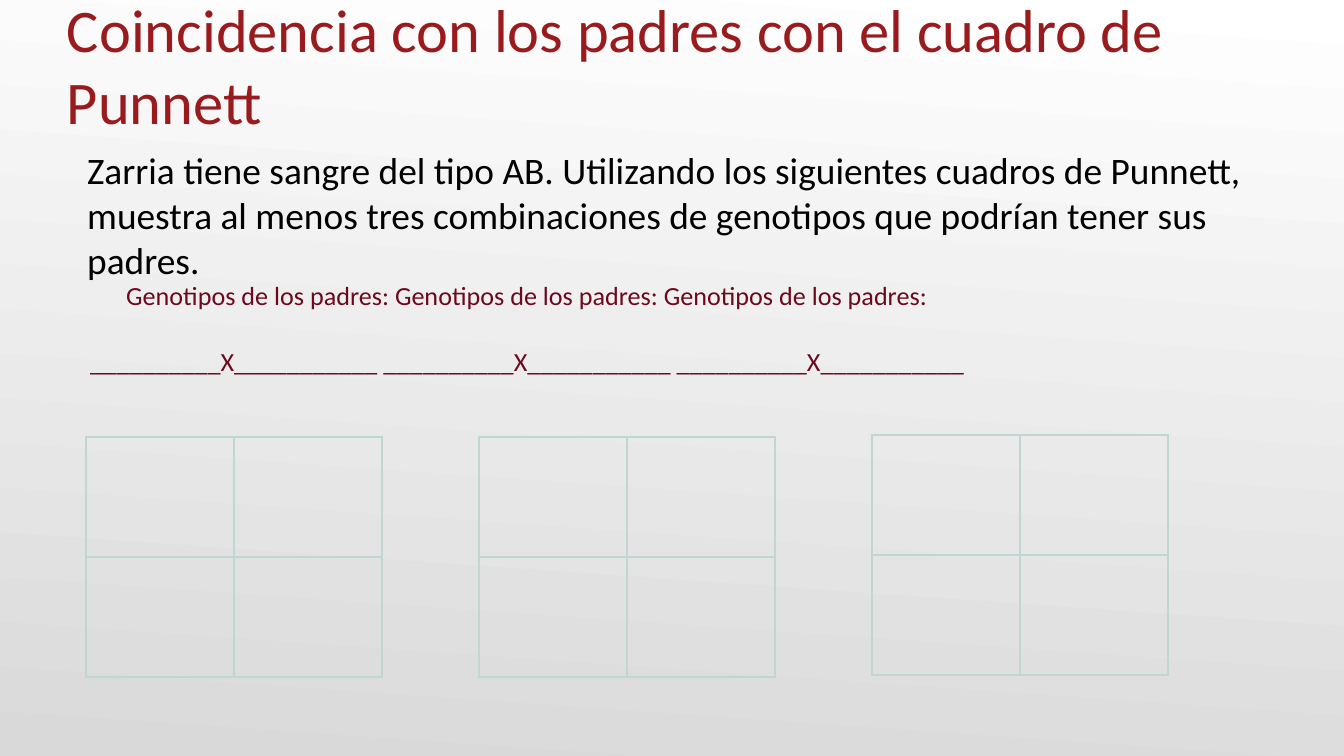
from lxml import etree
from pptx import Presentation
from pptx.dml.color import RGBColor as RGB
from pptx.enum.text import MSO_ANCHOR as Anchor, MSO_AUTO_SIZE as Fit, PP_ALIGN as Align
from pptx.oxml.ns import qn
from pptx.util import Pt

# One px is 1/134.4 inch
PX = 914400 / 134.4
THEME = {
    "font": "Calibri",
    "title": ("991B1E", 32.4),
    "body": ("000000", 20),
    "label": ("6C091D", 14),
    "grid": "BED7D3",
    "back": ("FFFFFF", "D9D9D9"),
}


def px(*nums):
    return [round(n * PX) for n in nums]


def write(par, text, role="body", before=0, indent=0):
    """Put formatted text in a paragraph."""
    color, size = THEME[role]
    props = par._p.get_or_add_pPr()
    props.set("marL", "0")
    props.set("indent", str(px(indent)[0]))
    par.alignment = Align.LEFT
    par.space_before = Pt(before)
    run = par.add_run()
    run.text = text
    run.font.name = THEME["font"]
    run.font.size = Pt(size)
    run.font.color.rgb = RGB.from_string(color)


deck = Presentation()
deck.slide_width, deck.slide_height = px(1344, 756)
slide = deck.slides.add_slide(deck.slide_layouts[5])
shapes = slide.shapes

# Background gradient
fill = slide.background.fill
fill.gradient()
fill.gradient_angle = 266
for stop, color in zip(fill.gradient_stops, THEME["back"]):
    stop.color.rgb = RGB.from_string(color)

# Title
title = shapes.title
title.left, title.top, title.width, title.height = px(67, 11, 1210, 126)
frame = title.text_frame
frame.auto_size = Fit.NONE
frame.word_wrap = True
frame.vertical_anchor = Anchor.BOTTOM
frame.margin_left, frame.margin_top, frame.margin_right, frame.margin_bottom = px(0, 7, 0, 0)
write(frame.paragraphs[0], "Coincidencia con los padres con el cuadro de Punnett", role="title")

# Question
frame = shapes.add_textbox(*px(74, 141, 1210, 103)).text_frame
frame.word_wrap = True
write(frame.paragraphs[0],
      "Zarria tiene sangre del tipo AB. Utilizando los siguientes cuadros de Punnett, "
      "muestra al menos tres combinaciones de genotipos que podrían tener sus padres.")

# Three empty Punnett squares
for left, top in ((86, 437), (479, 437), (872, 435)):
    table = shapes.add_table(2, 2, *px(left, top, 296, 240)).table
    table.first_row = table.horz_banding = False
    for cell in table.iter_cells():
        cell.fill.background()
        props = cell._tc.get_or_add_tcPr()
        for i, side in enumerate(("lnL", "lnR", "lnT", "lnB")):
            line = etree.Element(qn("a:" + side), w=str(Pt(1)))
            solid = etree.SubElement(line, qn("a:solidFill"))
            etree.SubElement(solid, qn("a:srgbClr"), val=THEME["grid"])
            props.insert(i, line)

# Parent genotypes, one label and one blank for each square
frame = shapes.add_textbox(*px(48, 273, 1247, 113)).text_frame
frame.word_wrap = True
label = " ".join(["Genotipos de los padres:"] * 3)
blank = " ".join(["_" * 10 + "X" + "_" * 11] * 3)
write(frame.paragraphs[0], label, role="label", indent=65)
write(frame.add_paragraph(), blank, role="label", before=18.5, indent=29)

deck.save("out.pptx")
